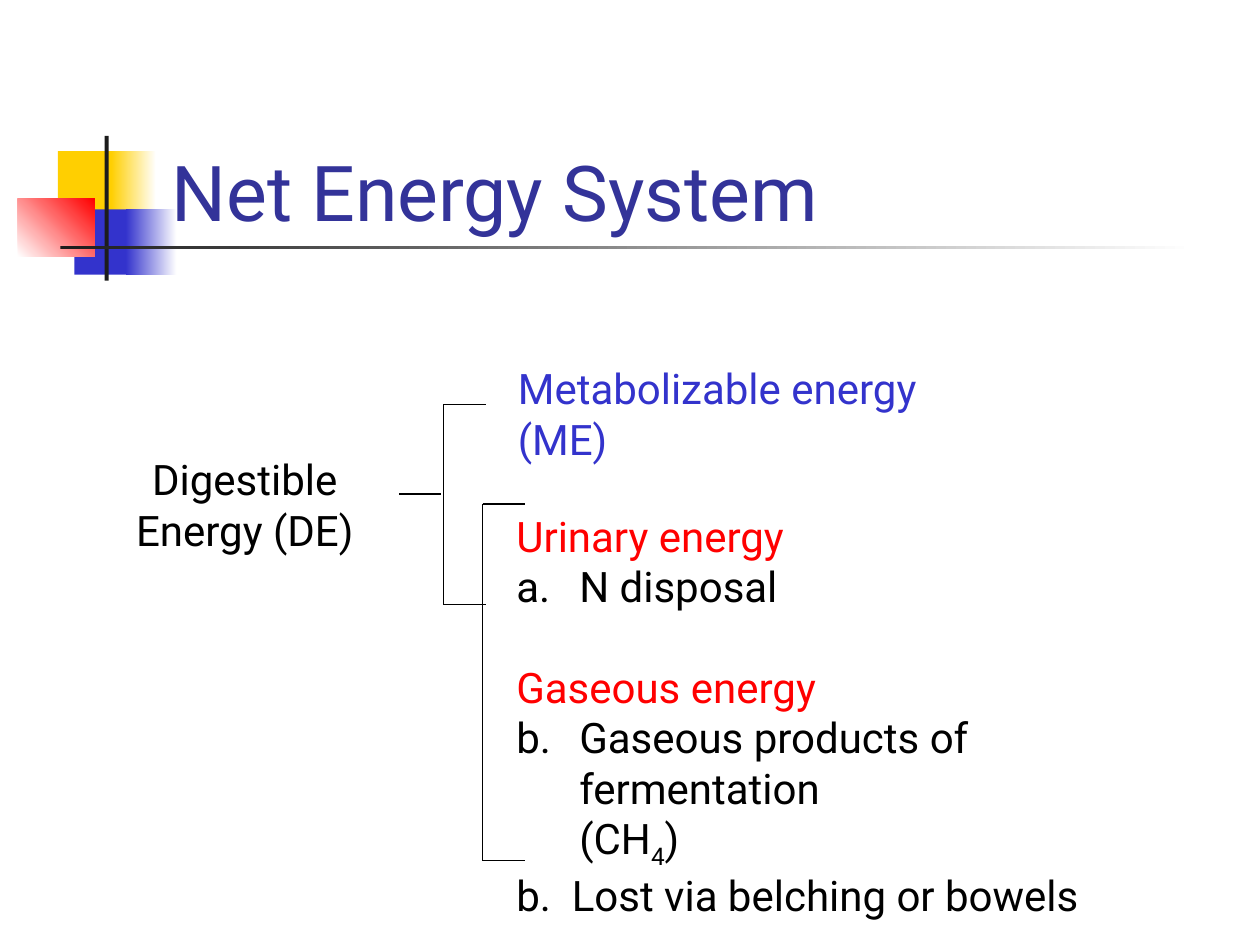
from lxml.etree import SubElement as Sub
from pptx import Presentation
from pptx.dml.color import RGBColor as RGB
from pptx.enum.shapes import MSO_CONNECTOR as Conn, MSO_SHAPE as Shape
from pptx.enum.text import MSO_ANCHOR as Anchor, MSO_AUTO_SIZE as Auto, PP_ALIGN as Align
from pptx.oxml.ns import qn
from pptx.util import Cm, Pt

COLORS = {
    "gold": "FFCF01", "blue": "3333CC", "red": "FF0000", "white": "FFFFFF",
    "dark": "1C1C1C", "navy": "333399", "black": "000000",
}


class Deck:
    font = "Roboto"
    size = 24

    def __init__(self):
        self.prs = Presentation()
        self.prs.slide_width, self.prs.slide_height = Cm(25.4), Cm(19.05)
        self.slide = self.prs.slides.add_slide(self.prs.slide_layouts[5])

    def color(self, name):
        return RGB.from_string(COLORS[name])

    def style(self, para, color, size=None):
        para.font.name = self.font
        para.font.size = Pt(size or self.size)
        para.font.color.rgb = self.color(color)

    def block(self, box, start, end=None, angle=0):
        """Rectangle in one colour, or a gradient from start to end."""
        rect = self.slide.shapes.add_shape(Shape.RECTANGLE, *map(Cm, box))
        rect.shadow.inherit = False
        rect.line.fill.background()
        if end is None:
            rect.fill.solid()
            rect.fill.fore_color.rgb = self.color(start)
            return
        rect.fill.gradient()
        rect.fill.gradient_angle = angle
        for stop, name in zip(rect.fill.gradient_stops, (start, end)):
            stop.color.rgb = self.color(name)

    def title(self, text, box):
        head = self.slide.shapes.title
        head.left, head.top, head.width, head.height = map(Cm, box)
        frame = head.text_frame
        frame.text = text
        frame.auto_size = Auto.NONE
        frame.vertical_anchor = Anchor.BOTTOM
        para = frame.paragraphs[0]
        para.alignment = Align.LEFT
        self.style(para, "navy", 44)
        # Keep the title in front of the blocks
        head.element.getparent().append(head.element)

    def line(self, x1, y1, x2, y2):
        line = self.slide.shapes.add_connector(Conn.STRAIGHT, *map(Cm, (x1, y1, x2, y2)))
        line.line.color.rgb = self.color("black")
        line.line.width = Pt(0.75)
        Sub(line.element.spPr, qn("a:effectLst"))

    def bracket(self, x, top, bottom, arm=0.85):
        self.line(x, top, x, bottom)
        for y in (top, bottom):
            self.line(x, y, x + arm, y)

    def text(self, box, items, align=Align.LEFT):
        """Items are (text, colour) pairs; returns the paragraphs."""
        frame = self.slide.shapes.add_textbox(*map(Cm, box)).text_frame
        frame.word_wrap = True
        for i, (text, color) in enumerate(items):
            para = frame.add_paragraph() if i else frame.paragraphs[0]
            para.text = text
            para.alignment = align
            self.style(para, color)
        return frame.paragraphs

    def indent(self, para, first=-1.27, number=None):
        props = para._p.get_or_add_pPr()
        props.set("marL", str(Cm(1.27)))
        props.set("indent", str(Cm(first)))
        if number:
            Sub(props, qn("a:buFont"), typeface=self.font)
            Sub(props, qn("a:buAutoNum"), type="alphaLcPeriod", startAt=str(number))


def main():
    deck = Deck()

    # Coloured blocks and rules beside the title
    deck.block((1.17, 3.05, 1.22, 1.32), "gold")
    deck.block((2.24, 3.05, 0.91, 1.32), "gold", "white")
    deck.block((1.5, 4.22, 1.17, 1.32), "blue")
    deck.block((2.54, 4.22, 1.02, 1.32), "blue", "white")
    deck.block((0.36, 4.01, 1.55, 1.17), "white", "red", 45)
    deck.block((2.11, 2.74, 0.08, 2.92), "dark")
    deck.block((1.22, 4.95, 22.86, 0.08), "dark", "white")
    deck.title("Net Energy System", (3.2, 1.73, 21.64, 3.18))

    # Brackets
    deck.line(8.05, 9.96, 8.89, 9.96)
    deck.bracket(8.94, 8.15, 12.19)
    deck.bracket(9.73, 10.16, 17.35)

    # Energy being split
    deck.text((2.41, 9.02, 5.05, 2.29),
              [("Digestible", "black"), ("Energy (DE)", "black")], Align.CENTER)
    deck.text((10.19, 7.19, 10.2, 1.27), [("Metabolizable energy (ME)", "blue")])

    # Losses
    urine, waste, gas, ferment, methane, lost = deck.text((10.16, 10.16, 14.45, 7.37), [
        ("Urinary energy", "red"),
        ("N disposal", "black"),
        ("Gaseous energy", "red"),
        ("Gaseous products of fermentation", "black"),
        ("(CH", "black"),
        ("b.  Lost via belching or bowels", "black"),
    ])
    for para in (urine, gas, lost):
        deck.indent(para)
    gas.space_before = Pt(28.8)
    deck.indent(waste, number=1)
    deck.indent(ferment, number=2)
    deck.indent(methane, first=0)
    sub = methane.add_run()
    sub.text = "4"
    sub.font._element.set("baseline", "-25000")
    methane.add_run().text = ")"

    deck.prs.save("out.pptx")


if __name__ == "__main__":
    main()
